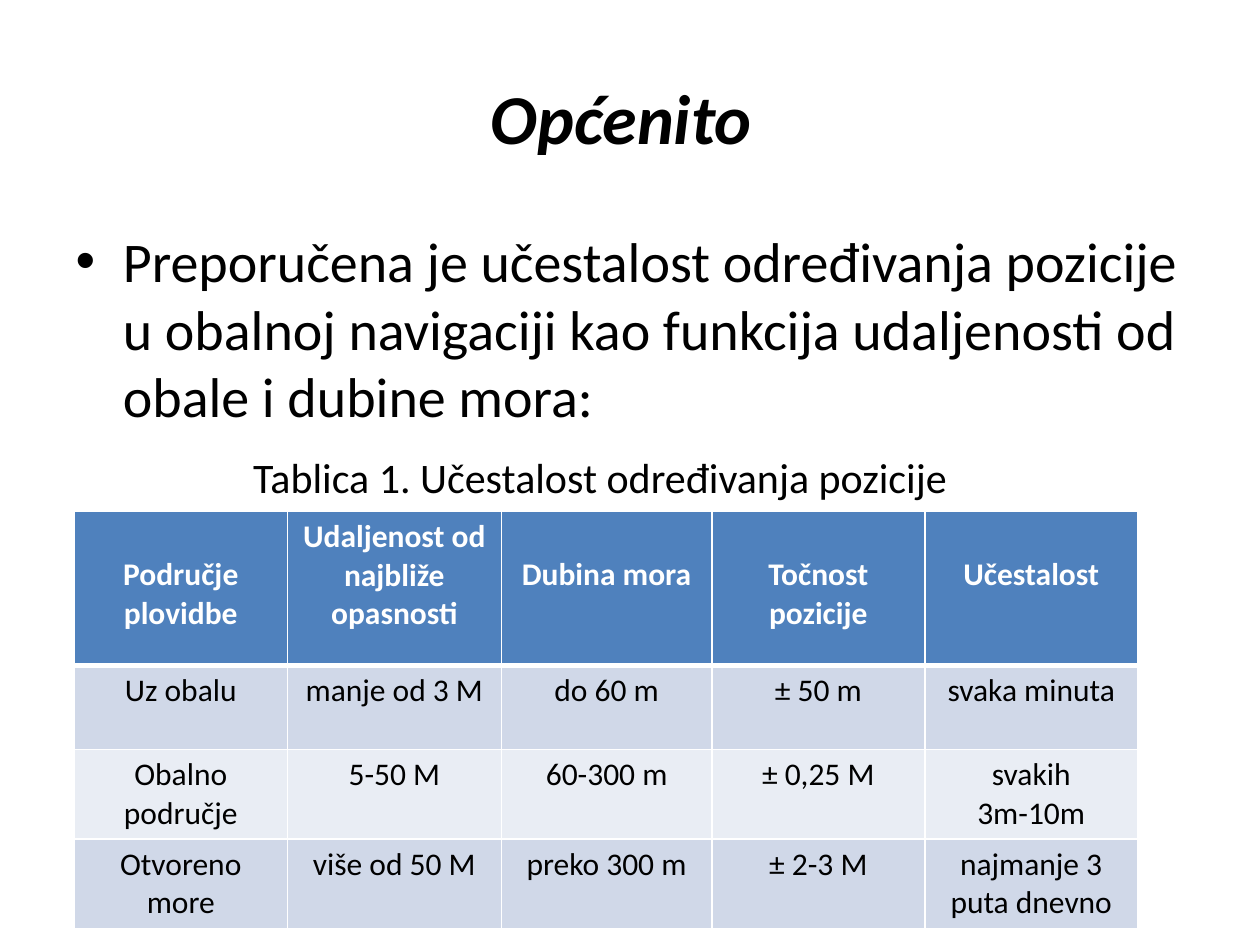
import pptx
import pptx.util
import pptx.dml.color
import pptx.enum.text
import pptx.oxml
import pptx.oxml.ns

Inches, Pt = pptx.util.Inches, pptx.util.Pt
CENTER = pptx.enum.text.PP_ALIGN.CENTER
FONT = "Calibri"
BLACK, WHITE, BLUE = "000000", "FFFFFF", "4F81BD"
BANDS = ["D0D8E8", "E9EDF4"]

TITLE = "Općenito"
RECOMMENDATION = (
    "Preporučena je učestalost određivanja pozicije u obalnoj navigaciji "
    "kao funkcija udaljenosti od obale i dubine mora:"
)
CAPTION = "Tablica 1. Učestalost određivanja pozicije"
HEADINGS = ["Područje plovidbe", "Udaljenost od najbliže opasnosti",
            "Dubina mora", "Točnost pozicije", "Učestalost"]
AREAS = [
    ["Uz obalu", "manje od 3 M", "do 60 m", "± 50 m", "svaka minuta"],
    ["Obalno područje", "5-50 M", "60-300 m", "± 0,25 M", "svakih\n3m-10m"],
    ["Otvoreno more", "više od 50 M", "preko 300 m", "± 2-3 M",
     "najmanje 3 puta dnevno"],
]
COLUMN_WIDTHS = [1.69, 1.7, 1.67, 1.69, 1.69]
ROW_HEIGHTS = [1.22, 0.67, 0.71, 0.71]
RAISED_HEADING = 1


def rgb(value):
    return pptx.dml.color.RGBColor.from_string(value)


def place(shape, left, top, width, height):
    shape.left, shape.top = Inches(left), Inches(top)
    shape.width, shape.height = Inches(width), Inches(height)


def set_font(paragraph, size, color=BLACK, bold=False, italic=False):
    font = paragraph.font
    font.name, font.size = FONT, Pt(size)
    font.bold, font.italic = bold, italic
    font.color.rgb = rgb(color)


def set_borders(cell, widths):
    properties = cell._tc.get_or_add_tcPr()
    for position, (side, width) in enumerate(widths.items()):
        properties.insert(position, pptx.oxml.parse_xml(
            f'<a:{side} {pptx.oxml.ns.nsdecls("a")} w="{Pt(width)}">'
            f'<a:solidFill><a:srgbClr val="{WHITE}"/></a:solidFill></a:{side}>'))


def fill_cell(cell, text, row, column):
    heading = row == 0
    cell.text = text
    for paragraph in cell.text_frame.paragraphs:
        paragraph.alignment = CENTER
        set_font(paragraph, 18, WHITE if heading else BLACK, bold=heading)
    if heading and column != RAISED_HEADING:
        cell.margin_top = Inches(0.35)
    cell.fill.solid()
    cell.fill.fore_color.rgb = rgb(BLUE if heading else BANDS[(row - 1) % 2])
    set_borders(cell, {"lnL": 1, "lnR": 1, "lnT": 3 if row == 1 else 1,
                       "lnB": 3 if heading else 1})


def main():
    deck = pptx.Presentation()
    deck.slide_width, deck.slide_height = Inches(10), Inches(7.5)
    slide = deck.slides.add_slide(deck.slide_layouts[1])

    title, body = slide.shapes.title, slide.placeholders[1]
    place(title, 0.43, 0.3, 9, 1.25)
    title.text_frame.text = TITLE
    heading = title.text_frame.paragraphs[0]
    heading.alignment = CENTER
    set_font(heading, 40, bold=True, italic=True)

    place(body, 0.5, 1.75, 9, 4.95)
    body.text_frame.text = RECOMMENDATION
    recommendation = body.text_frame.paragraphs[0]
    recommendation.space_before = Pt(0)
    set_font(recommendation, 32)

    caption = body.text_frame.add_paragraph()
    caption.text = CAPTION
    caption.space_before = Pt(13)
    layout = caption._p.get_or_add_pPr()
    layout.set("marL", str(Inches(1.41)))
    layout.set("indent", "0")
    layout.append(pptx.oxml.parse_xml(
        f'<a:buNone {pptx.oxml.ns.nsdecls("a")}/>'))
    set_font(caption, 24)

    rows = [HEADINGS] + AREAS
    table = slide.shapes.add_table(
        len(rows), len(HEADINGS), Inches(0.59), Inches(4.06),
        Inches(sum(COLUMN_WIDTHS)), Inches(sum(ROW_HEIGHTS))).table
    for column, width in zip(table.columns, COLUMN_WIDTHS):
        column.width = Inches(width)
    for row, height in zip(table.rows, ROW_HEIGHTS):
        row.height = Inches(height)
    for r, texts in enumerate(rows):
        for c, text in enumerate(texts):
            fill_cell(table.cell(r, c), text, r, c)

    deck.save("out.pptx")


if __name__ == "__main__":
    main()
